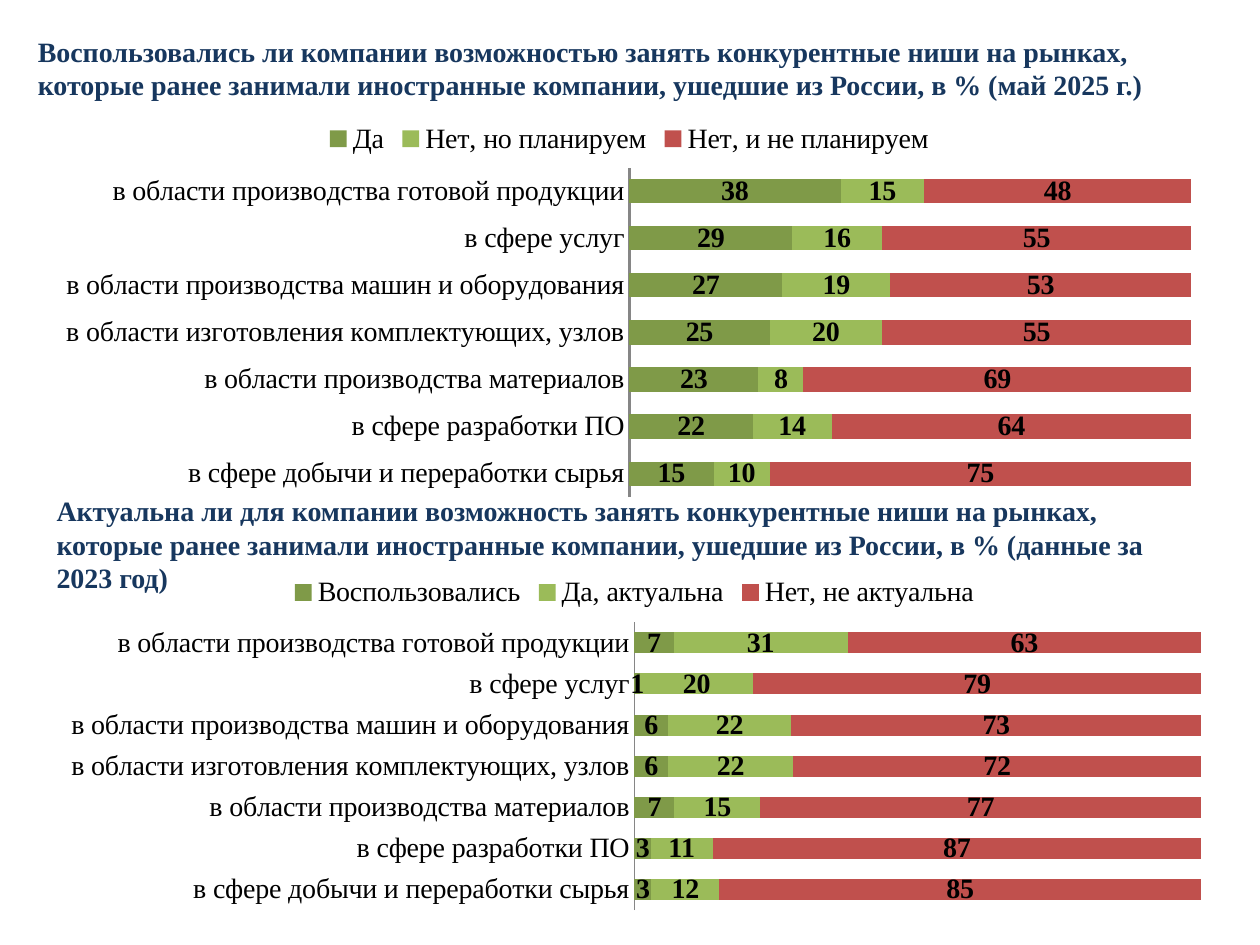
from dataclasses import dataclass

from pptx import Presentation
from pptx.chart.data import CategoryChartData
from pptx.dml.color import RGBColor
from pptx.enum.chart import XL_CHART_TYPE, XL_LABEL_POSITION, XL_LEGEND_POSITION, XL_TICK_MARK
from pptx.enum.text import MSO_ANCHOR, MSO_AUTO_SIZE, PP_ALIGN
from pptx.oxml import parse_xml
from pptx.oxml.ns import nsdecls
from pptx.util import Inches, Pt

BAR_STACKED_100 = XL_CHART_TYPE.BAR_STACKED_100
LABEL_CENTER = XL_LABEL_POSITION.CENTER
LEGEND_TOP = XL_LEGEND_POSITION.TOP
NO_TICKS = XL_TICK_MARK.NONE
ANCHOR_TOP = MSO_ANCHOR.TOP
NO_AUTOFIT = MSO_AUTO_SIZE.NONE
LEFT = PP_ALIGN.LEFT

FONT = "Times New Roman"
FONT_SIZE = 16
COLORS = {"heading": "17375E", "text": "000000", "axis": "868686"}
ANSWER_COLORS = ["7F9A48", "9BBB59", "C0504D"]

AREAS = [
    "в области производства готовой продукции",
    "в сфере услуг",
    "в области производства машин и оборудования",
    "в области изготовления комплектующих, узлов",
    "в области производства материалов",
    "в сфере разработки ПО",
    "в сфере добычи и переработки сырья",
]


@dataclass
class Box:
    left: float
    top: float
    width: float
    height: float

    def lengths(self) -> list:
        return [Inches(v) for v in (self.left, self.top, self.width, self.height)]


@dataclass
class Survey:
    question: str
    heading_box: Box
    chart_box: Box
    plot_top: float  # share of the chart height
    plot_height: float
    axis_width: float
    answers: dict


SURVEYS = [
    Survey(
        "Воспользовались ли компании возможностью занять конкурентные ниши на рынках, "
        "которые ранее занимали иностранные компании, ушедшие из России, в % (май 2025 г.)",
        Box(0.2, 0.22, 9.45, 0.64), Box(0.35, 0.86, 9.29, 3.15), 0.15, 0.83, 1.5,
        {
            "Да": [38, 29, 27, 25, 23, 22, 15],
            "Нет, но планируем": [15, 16, 19, 20, 8, 14, 10],
            "Нет, и не планируем": [48, 55, 53, 55, 69, 64, 75],
        },
    ),
    Survey(
        "Актуальна ли для компании возможность занять конкурентные ниши на рынках, "
        "которые ранее занимали иностранные компании, ушедшие из России, в % (данные за 2023 год)",
        Box(0.35, 3.87, 9.29, 0.64), Box(0.35, 4.46, 9.37, 2.82), 0.17, 0.81, 0.75,
        {
            "Воспользовались": [7, 1, 6, 6, 7, 3, 3],
            "Да, актуальна": [31, 20, 22, 22, 15, 11, 12],
            "Нет, не актуальна": [63, 79, 73, 72, 77, 87, 85],
        },
    ),
]


def rgb(name: str) -> RGBColor:
    return RGBColor.from_string(COLORS[name])


def format_font(font, color: str = "text", bold: bool = False) -> None:
    font.name, font.size, font.bold = FONT, Pt(FONT_SIZE), bold
    font.color.rgb = rgb(color)


def write_text(shape, text: str, box: Box, *, color: str, bold: bool) -> None:
    shape.left, shape.top, shape.width, shape.height = box.lengths()
    frame = shape.text_frame
    frame.word_wrap = True
    frame.auto_size = NO_AUTOFIT
    frame.vertical_anchor = ANCHOR_TOP
    paragraph = frame.paragraphs[0]
    paragraph.alignment = LEFT
    run = paragraph.add_run()
    run.text = text
    format_font(run.font, color, bold)


def place_plot(chart, top: float, height: float) -> None:
    """Fix the inner plot area, so that the bars of both charts start in line."""
    plot_area = chart.element.xpath("c:chart/c:plotArea")[0]
    for layout in plot_area.xpath("c:layout"):
        plot_area.remove(layout)
    plot_area.insert(0, parse_xml(
        f'<c:layout {nsdecls("c")}><c:manualLayout><c:layoutTarget val="inner"/>'
        '<c:xMode val="edge"/><c:yMode val="edge"/>'
        f'<c:x val="0.5"/><c:y val="{top}"/><c:w val="0.48"/><c:h val="{height}"/>'
        "</c:manualLayout></c:layout>"))


def add_survey_chart(slide, survey: Survey) -> None:
    data = CategoryChartData(number_format="#,##0")
    data.categories = AREAS
    for answer, shares in survey.answers.items():
        data.add_series(answer, shares)
    chart = slide.shapes.add_chart(BAR_STACKED_100, *survey.chart_box.lengths(), data).chart
    format_font(chart.font)
    chart.has_title = False
    place_plot(chart, survey.plot_top, survey.plot_height)

    # Legend and axes
    chart.has_legend = True
    chart.legend.position = LEGEND_TOP
    chart.legend.include_in_layout = False
    chart.value_axis.has_major_gridlines = False
    chart.value_axis.visible = False
    areas_axis = chart.category_axis
    areas_axis.reverse_order = True
    areas_axis.major_tick_mark = areas_axis.minor_tick_mark = NO_TICKS
    areas_axis.format.line.color.rgb = rgb("axis")
    areas_axis.format.line.width = Pt(survey.axis_width)

    # Bars and their values
    plot = chart.plots[0]
    plot.gap_width, plot.overlap = 95, 100
    plot.vary_by_categories = False
    for series, color in zip(plot.series, ANSWER_COLORS):
        series.format.fill.solid()
        series.format.fill.fore_color.rgb = RGBColor.from_string(color)
        labels = series.data_labels
        labels.show_value = True
        labels.number_format, labels.number_format_is_linked = "#,##0", False
        labels.position = LABEL_CENTER
        format_font(labels.font, bold=True)


def main() -> None:
    prs = Presentation()
    prs.slide_width, prs.slide_height = Inches(10), Inches(7.5)
    slide = prs.slides.add_slide(prs.slide_layouts[5])  # Title Only

    # The first question is the title, the second a text box
    for index, survey in enumerate(SURVEYS):
        add_survey_chart(slide, survey)
        heading = (slide.shapes.add_textbox(*survey.heading_box.lengths())
                   if index else slide.shapes.title)
        write_text(heading, survey.question, survey.heading_box, color="heading", bold=True)

    prs.save("out.pptx")


if __name__ == "__main__":
    main()
